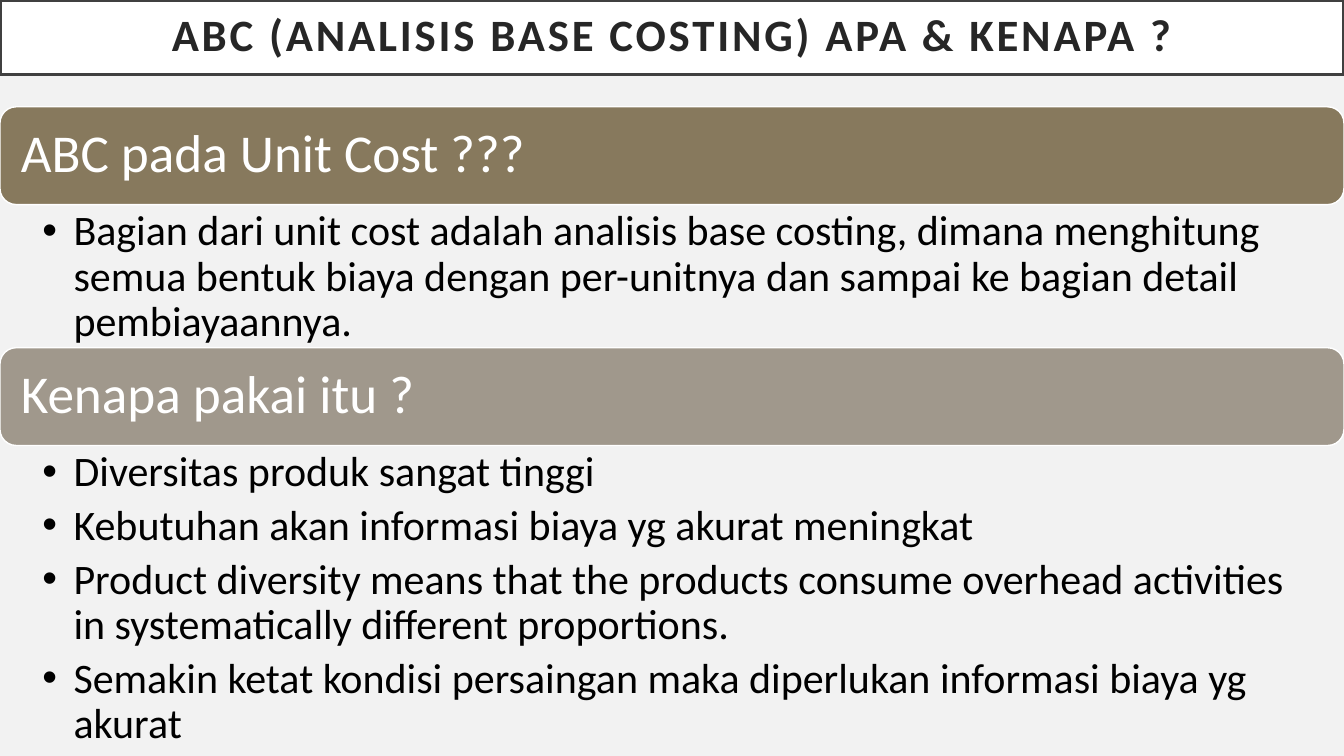
from dataclasses import dataclass

from lxml import etree
from pptx import Presentation
from pptx.dml.color import RGBColor
from pptx.enum.shapes import MSO_SHAPE
from pptx.enum.text import MSO_ANCHOR, MSO_AUTO_SIZE, PP_ALIGN
from pptx.oxml.ns import qn
from pptx.util import Inches, Pt

ROUNDED = MSO_SHAPE.ROUNDED_RECTANGLE
MIDDLE, TOP = MSO_ANCHOR.MIDDLE, MSO_ANCHOR.TOP
LEFT, CENTER = PP_ALIGN.LEFT, PP_ALIGN.CENTER
TITLE_ONLY = 5

TITLE = "ABC (ANALISIS BASE COSTING) APA & KENAPA ?"
SECTIONS = [
    {
        "heading": "ABC pada Unit Cost ???",
        "fill": "87795D",
        "body_height": 1.42,
        "points": [
            "Bagian dari unit cost adalah analisis base costing, dimana menghitung "
            "semua bentuk biaya dengan per-unitnya dan sampai ke bagian detail "
            "pembiayaannya.",
        ],
    },
    {
        "heading": "Kenapa pakai itu ?",
        "fill": "A0988C",
        "body_height": 3.01,
        "points": [
            "Diversitas produk sangat tinggi",
            "Kebutuhan akan informasi biaya yg akurat meningkat",
            "Product diversity means that the products consume overhead activities "
            "in systematically different proportions.",
            "Semakin ketat kondisi persaingan maka diperlukan informasi biaya yg akurat",
        ],
    },
]

WIDTH, HEIGHT = 13.33, 7.5
TITLE_HEIGHT = 0.74
SECTIONS_TOP = 1.06
HEADING_HEIGHT = 0.97
BULLET_INDENT = 0.31


@dataclass(frozen=True)
class Theme:
    font: str = "Calibri"
    background: str = "F2F2F2"
    white: str = "FFFFFF"
    title_line: str = "404040"
    title_text: str = "262626"
    body_text: str = "000000"
    title_size: int = 32
    heading_size: int = 38
    body_size: int = 30


THEME = Theme()


def paint(shape, fill, line, line_width):
    shape.fill.solid()
    shape.fill.fore_color.rgb = RGBColor.from_string(fill)
    shape.line.color.rgb = RGBColor.from_string(line)
    shape.line.width = Pt(line_width)


def add_bullet(paragraph):
    properties = paragraph._p.get_or_add_pPr()
    properties.set("marL", str(Inches(BULLET_INDENT)))
    properties.set("indent", str(-Inches(BULLET_INDENT)))
    etree.SubElement(properties, qn("a:buFont")).set("typeface", "Arial")
    etree.SubElement(properties, qn("a:buChar")).set("char", "•")


def write(shape, *lines, size, color, margins, anchor=MIDDLE, align=LEFT,
          bold=False, tracking=0, space_after=0, bullets=False):
    """Fill a shape with one paragraph a line; margins run left, top, right, bottom."""
    frame = shape.text_frame
    frame.word_wrap = True
    frame.auto_size = MSO_AUTO_SIZE.NONE
    frame.vertical_anchor = anchor
    (frame.margin_left, frame.margin_top,
     frame.margin_right, frame.margin_bottom) = map(Inches, margins)
    for index, line in enumerate(lines):
        paragraph = frame.add_paragraph() if index else frame.paragraphs[0]
        paragraph.alignment = align
        paragraph.line_spacing = 0.9
        paragraph.space_before = Pt(0)
        paragraph.space_after = Pt(space_after)
        if bullets:
            add_bullet(paragraph)
        run = paragraph.add_run()
        run.text = line
        run.font.name = THEME.font
        run.font.size = Pt(size)
        run.font.bold = bold
        run.font.color.rgb = RGBColor.from_string(color)
        if tracking:
            run._r.get_or_add_rPr().set("spc", str(tracking * 100))


def add_title(slide):
    title = slide.shapes.title
    title.left, title.top = 0, 0
    title.width, title.height = Inches(WIDTH), Inches(TITLE_HEIGHT)
    paint(title, THEME.white, THEME.title_line, 2.5)
    write(title, TITLE, size=THEME.title_size, color=THEME.title_text,
          margins=(0.2, 0.2, 0.2, 0.2), align=CENTER, bold=True, tracking=2)


def add_section(slide, section, top):
    """Draw a heading bar with its points and return the bottom edge."""
    bar = slide.shapes.add_shape(
        ROUNDED, 0, Inches(top), Inches(WIDTH), Inches(HEADING_HEIGHT))
    bar.shadow.inherit = False
    paint(bar, section["fill"], THEME.white, 1)
    write(bar, section["heading"], size=THEME.heading_size, color=THEME.white,
          margins=(0.16, 0.16, 0.16, 0.16))

    body_top = top + HEADING_HEIGHT
    body = slide.shapes.add_textbox(
        0, Inches(body_top), Inches(WIDTH), Inches(section["body_height"]))
    write(body, *section["points"], size=THEME.body_size, color=THEME.body_text,
          margins=(0.42, 0.05, 0.3, 0.05), anchor=TOP,
          space_after=0.2 * THEME.body_size, bullets=True)
    return body_top + section["body_height"]


def main():
    presentation = Presentation()
    presentation.slide_width = Inches(WIDTH)
    presentation.slide_height = Inches(HEIGHT)
    slide = presentation.slides.add_slide(presentation.slide_layouts[TITLE_ONLY])
    slide.background.fill.solid()
    slide.background.fill.fore_color.rgb = RGBColor.from_string(THEME.background)
    add_title(slide)
    top = SECTIONS_TOP
    for section in SECTIONS:
        top = add_section(slide, section, top)
    presentation.save("out.pptx")


if __name__ == "__main__":
    main()
